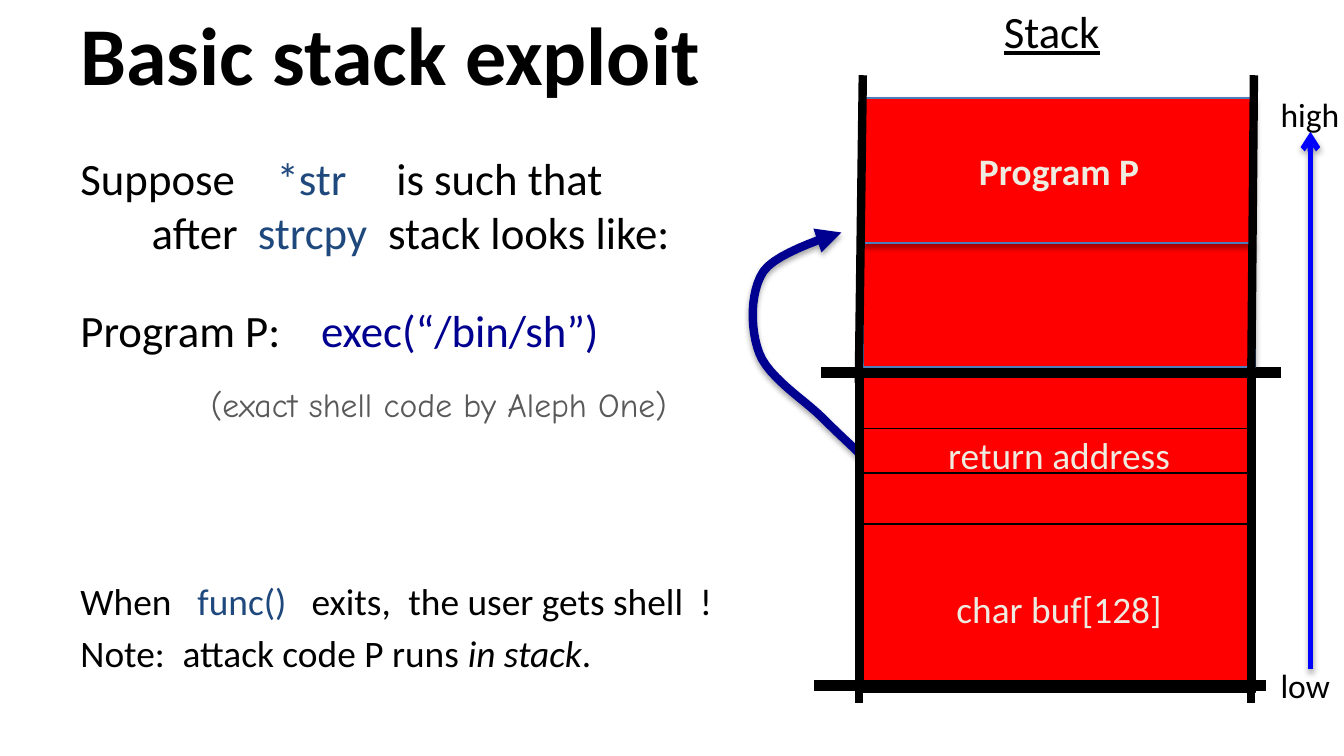
import dataclasses

import pptx
import pptx.dml.color
import pptx.enum.shapes
import pptx.enum.text
import pptx.oxml
import pptx.oxml.ns
import pptx.util

PX = 9144
ANCHOR = pptx.enum.text.MSO_ANCHOR
ALIGN = pptx.enum.text.PP_ALIGN


@dataclasses.dataclass(frozen=True)
class Theme:
    """Fonts, colours, type sizes and line widths of the slide."""
    font: str = "Calibri"
    hand: str = "Comic Neue"
    ink: str = "000000"
    code: str = "1F497D"
    navy: str = "000090"
    axis: str = "0000FF"
    cell: str = "FF0000"
    cell_text: str = "EEECE1"
    edge: str = "4B7EBC"
    grey: str = "595959"
    title: int = 44
    body: int = 24
    small: int = 20
    label: int = 18
    hair: float = 0.75
    rail: float = 4.5
    bar: float = 6


THEME = Theme()


def rgb(color):
    """Turn a hex string into a colour."""
    return pptx.dml.color.RGBColor.from_string(color)


def emu(*lengths):
    """Turn px lengths into EMU."""
    return [pptx.util.Emu(length * PX) for length in lengths]


def add_xml(parent, tag, inner="", **attrs):
    """Append a DrawingML element to parent."""
    attrs = " ".join(f'{k}="{v}"' for k, v in attrs.items())
    ns = pptx.oxml.ns.nsdecls("a")
    parent.append(pptx.oxml.parse_xml(f"<a:{tag} {ns} {attrs}>{inner}</a:{tag}>"))


def stroke(sp, color, width, head=None, shadow=False):
    """Style the line of a shape or connector, with its arrowhead and shadow."""
    sp.line.color.rgb = rgb(color)
    sp.line.width = pptx.util.Pt(width)
    if head:
        add_xml(sp.line._ln, "tailEnd", type=head)
    for old in sp._element.spPr.findall(pptx.oxml.ns.qn("a:effectLst")):
        sp._element.spPr.remove(old)
    inner = ('<a:outerShdw blurRad="40000" dist="23000" dir="5400000" rotWithShape="0">'
             '<a:srgbClr val="000000"><a:alpha val="35000"/></a:srgbClr></a:outerShdw>')
    add_xml(sp._element.spPr, "effectLst", inner if shadow else "")


def add_run(p, text, size, color=THEME.ink, font=THEME.font, **style):
    """Add one styled run to a paragraph."""
    r = p.add_run()
    r.text = text
    r.font.size = pptx.util.Pt(size)
    r.font.name = font
    r.font.color.rgb = rgb(color)
    for name, value in style.items():
        setattr(r.font, name, value)


def add_text(s, x, y, w, h, wrap=False, anchor=ANCHOR.TOP):
    """Add an empty text box and return its text frame."""
    tf = s.shapes.add_textbox(*emu(x, y, w, h)).text_frame
    tf.word_wrap = wrap
    tf.vertical_anchor = anchor
    return tf


def add_label(s, x, y, w, h, text, size, **style):
    """Add a text box that holds one run."""
    add_run(add_text(s, x, y, w, h).paragraphs[0], text, size, **style)


def add_line(s, x1, y1, x2, y2, color, width, **style):
    """Add a straight connector."""
    kind = pptx.enum.shapes.MSO_CONNECTOR.STRAIGHT
    stroke(s.shapes.add_connector(kind, *emu(x1, y1, x2, y2)), color, width, **style)


def add_cell(s, x, y, w, h, text="", raised=False, bold=None):
    """Add one block of stack memory."""
    sp = s.shapes.add_shape(pptx.enum.shapes.MSO_SHAPE.RECTANGLE, *emu(x, y, w, h))
    sp.fill.solid()
    sp.fill.fore_color.rgb = rgb(THEME.cell)
    stroke(sp, THEME.edge if raised else THEME.ink, THEME.hair, shadow=raised)
    if text:
        tf = sp.text_frame
        tf.word_wrap = raised
        tf.vertical_anchor = ANCHOR.MIDDLE
        tf.paragraphs[0].alignment = ALIGN.CENTER
        add_run(tf.paragraphs[0], text, THEME.small, THEME.cell_text, bold=bold)


def draw_title(s, x, y, w, h):
    """Draw the slide title."""
    tf = add_text(s, x, y, w, h, True, ANCHOR.BOTTOM)
    add_run(tf.paragraphs[0], "Basic stack exploit", THEME.title, bold=True)


def draw_body(s, x, y, w, h):
    """Draw the explanation, with gaps set by tab stops, and the side remark."""
    code, navy = {"color": THEME.code}, {"color": THEME.navy}
    body, small = THEME.body, THEME.small
    paragraphs = [
        (0, body, (146, 235), [("Suppose\t", {}), ("*str", code), ("\tis such that", {})]),
        (0, body, (53, 132, 229),
         [("\tafter\t", {}), ("strcpy", code), ("\tstack looks like:", {})]),
        (23.8, body, (179,), [("Program P:\t", {}), ("exec(“/bin/sh”)", navy)]),
        (119, small, (87, 172, 244, 461),
         [("When\t", {}), ("func()", code), ("\texits,\tthe user gets shell\t!", {})]),
        (4, small, (76,),
         [("Note:\tattack code P runs ", {}), ("in stack", {"italic": True}), (".", {})]),
    ]
    tf = add_text(s, x, y, w, h, True)
    for i, (before, size, stops, runs) in enumerate(paragraphs):
        p = tf.add_paragraph() if i else tf.paragraphs[0]
        p.space_before = pptx.util.Pt(before)
        tabs = "".join(f'<a:tab pos="{stop * PX}" algn="l"/>' for stop in stops)
        add_xml(p._p.get_or_add_pPr(), "tabLst", tabs)
        for text, style in runs:
            add_run(p, text, size, **style)
    add_label(s, x + 97, y + 174, 395, 40, "(exact shell code by Aleph One)",
              THEME.label, color=THEME.grey, font=THEME.hand)


def draw_jump(s, x, y, w, h):
    """Draw the curved arrow from the return address up to program P."""
    curves = [
        [(80, 165), (72, 157), (64, 150), (51, 137)],
        [(51, 137), (39, 125), (12, 108), (5, 90)],
        [(5, 90), (-2, 72), (-2, 44), (8, 29)],
        [(8, 29), (18, 14), (66, 0), (66, 0)],
    ]
    steps = 12
    points = []
    for curve in curves:
        for t in (n / steps for n in range(1, steps + 1)):
            weights = ((1 - t) ** 3, 3 * t * (1 - t) ** 2, 3 * t * t * (1 - t), t ** 3)
            points.append(tuple(
                round((start + sum(k * c[axis] for k, c in zip(weights, curve))) * PX)
                for axis, start in enumerate((x, y))))
    fb = s.shapes.build_freeform((x + w) * PX, (y + h) * PX)
    fb.add_line_segments(points, close=False)
    sp = fb.convert_to_shape()
    sp.fill.background()
    stroke(sp, THEME.navy, THEME.rail, head="triangle", shadow=True)


def draw_stack(s, x, y, w, h):
    """Draw the heading, memory blocks, rails and bars of the stack."""
    left, right, floor = x - 3, x + w - 3, y + h
    add_label(s, x + 95, y - 75, 92, 50, "Stack", THEME.body, underline=True)
    for top, height, text in [(208, 38, ""), (317, 125, "char buf[128]"),
                              (246, 38, "return address"), (279, 38, "")]:
        add_cell(s, x, y + top, w, height, text)
    add_line(s, left - 33, floor, right + 11, floor, THEME.ink, THEME.bar)
    add_line(s, left - 28, y + 204, right + 22, y + 204, THEME.ink, THEME.bar)
    add_cell(s, x, y + 108, w, 92, raised=True)
    add_cell(s, x, y, w, 108, "Program P", raised=True, bold=True)
    for foot, lean in ((left, 3), (right, 2)):
        add_line(s, foot, floor - 46, foot, floor + 13, THEME.ink, THEME.rail)
        add_line(s, foot + lean, y - 17, foot, y + 212, THEME.ink, THEME.rail)
    kind = pptx.enum.shapes.MSO_SHAPE.RECTANGLE
    frame = s.shapes.add_shape(kind, *emu(left, y + 204, w, h - 204))
    frame.fill.background()
    stroke(frame, THEME.ink, THEME.rail)


def draw_axis(s, x, y, w, h):
    """Draw the arrow from low to high addresses."""
    add_line(s, x + 32, y + 433, x + 32, y + 33, THEME.axis, 3, head="arrow", shadow=True)
    add_label(s, x, y + h - 40, 57, 40, "low", THEME.label)
    add_label(s, x, y, w, 40, "high", THEME.label)


def main():
    """Build the slide and save it."""
    prs = pptx.Presentation()
    prs.slide_width = pptx.util.Emu(1000 * PX)
    prs.slide_height = pptx.util.Emu(prs.slide_width * 9 // 16)
    s = prs.slides.add_slide(prs.slide_layouts[6])
    draw_title(s, 50, -5, 592, 86)
    draw_body(s, 50, 107, 508, 458)
    draw_jump(s, 560, 173, 80, 165)
    draw_stack(s, 642, 73, 292, 437)
    draw_axis(s, 943, 65, 64, 465)
    prs.save("out.pptx")


if __name__ == "__main__":
    main()
